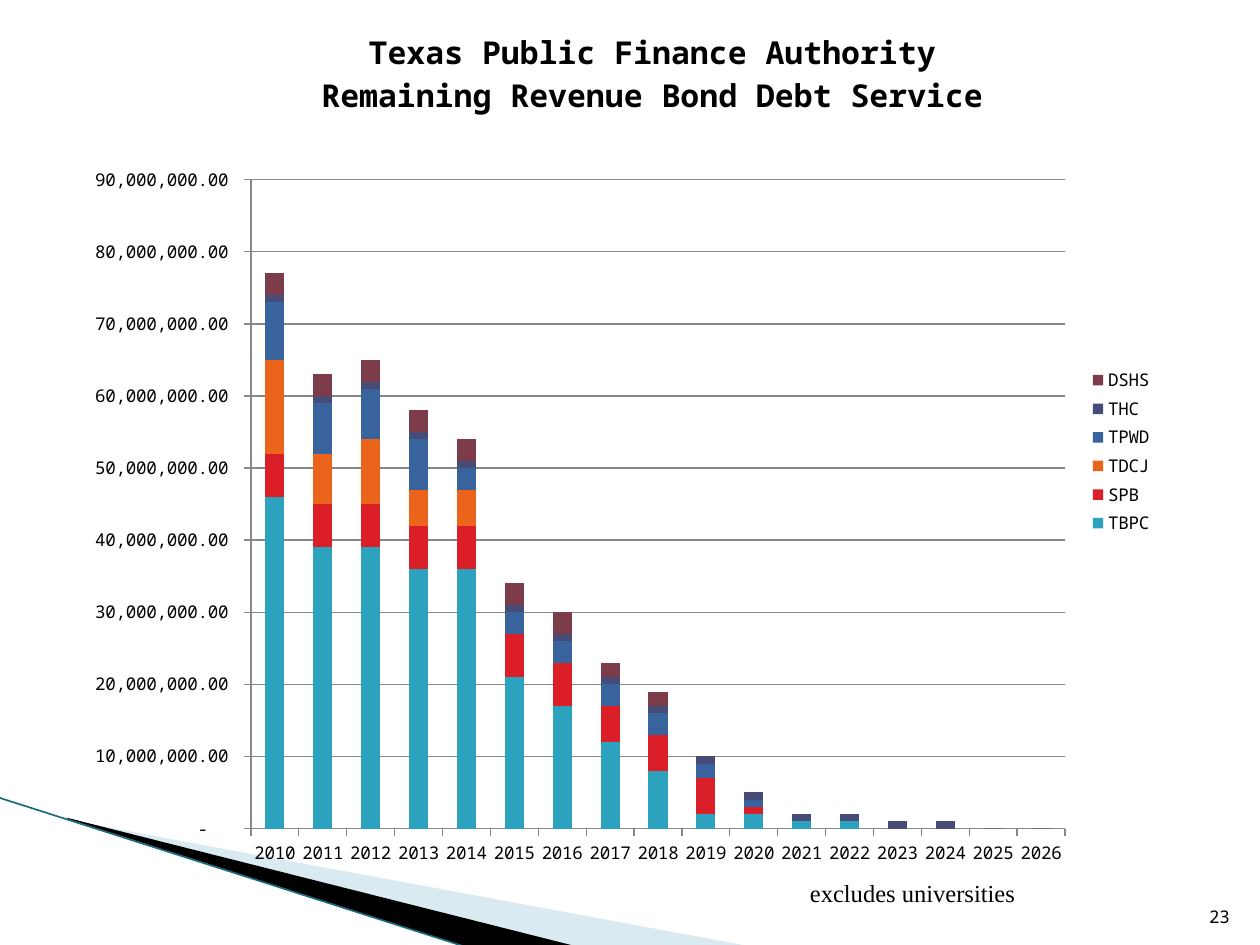
from lxml.etree import SubElement
from pptx import Presentation
from pptx.chart.data import CategoryChartData
from pptx.dml.color import RGBColor
from pptx.enum.chart import XL_CHART_TYPE, XL_LEGEND_POSITION, XL_TICK_MARK
from pptx.enum.shapes import MSO_CONNECTOR
from pptx.enum.text import MSO_ANCHOR, PP_ALIGN
from pptx.oxml import parse_xml
from pptx.oxml.ns import nsdecls, qn
from pptx.util import Inches, Pt

BLACK = RGBColor(0x00, 0x00, 0x00)
GRAY = RGBColor(0x88, 0x88, 0x88)
PALE = RGBColor(0xA0, 0xCB, 0xDC)
TEAL = RGBColor(0x1B, 0x6A, 0x7E)
AQUA = RGBColor(0x2D, 0xA2, 0xBF)
RED = RGBColor(0xDA, 0x1F, 0x28)
ORANGE = RGBColor(0xEB, 0x64, 0x1B)
BLUE = RGBColor(0x39, 0x63, 0x9D)
INDIGO = RGBColor(0x47, 0x4B, 0x78)
MAROON = RGBColor(0x7D, 0x3C, 0x4A)
MONO = "Noto Sans Mono"
SERIF = "Times New Roman"


def style(font, **values):
    font.color.rgb = BLACK
    for key, value in values.items():
        setattr(font, key, value)


def place(node, index, **percents):
    for old in node.findall(qn("c:layout")):
        node.remove(old)
    layout = parse_xml(f"<c:layout {nsdecls('c')}><c:manualLayout/></c:layout>")
    for tag, value in percents.items():
        text = value if isinstance(value, str) else str(value / 100)
        SubElement(layout[0], qn(f"c:{tag}")).set("val", text)
    node.insert(index, layout)


deck = Presentation()
deck.slide_width, deck.slide_height = Inches(10), Inches(7.5)
slide = deck.slides.add_slide(deck.slide_layouts[6])
shapes = slide.shapes

wedges = [
    (PALE, 40, [(0.55, 6.51), (5.95, 7.51), (4.56, 7.51), (0.55, 6.5)]),
    (BLACK, 100, [(0.53, 6.49), (4.57, 7.51), (3.72, 7.52), (0.54, 6.5)]),
]
for color, alpha, points in wedges:
    first, *rest = [(Inches(x), Inches(y)) for x, y in points]
    pen = shapes.build_freeform(*first)
    pen.add_line_segments(rest)
    wedge = pen.convert_to_shape()
    wedge.shadow.inherit = False
    wedge.line.fill.background()
    wedge.fill.solid()
    wedge.fill.fore_color.rgb = color
    if alpha < 100:
        tint = wedge.fill._xPr.find(qn("a:solidFill"))[0]
        SubElement(tint, qn("a:alpha")).set("val", str(alpha * 1000))

edge = shapes.add_connector(
    MSO_CONNECTOR.STRAIGHT, Inches(-0.01), Inches(6.33), Inches(3.71), Inches(7.52))
edge.line.color.rgb = TEAL
edge.line.width = Pt(0.95)
SubElement(edge._element.spPr, qn("a:effectLst"))

years = range(2010, 2027)
bonds = [
    ("TBPC", AQUA, [46, 39, 39, 36, 36, 21, 17, 12, 8, 2, 2, 1, 1]),
    ("SPB", RED, [6] * 7 + [5] * 3 + [1]),
    ("TDCJ", ORANGE, [13, 7, 9, 5, 5]),
    ("TPWD", BLUE, [8, 7, 7, 7, 3, 3, 3, 3, 3, 2, 1]),
    ("THC", INDIGO, [1] * 15),
    ("DSHS", MAROON, [3] * 7 + [2] * 2),
]
data = CategoryChartData()
data.categories = [str(year) for year in years]
for name, color, costs in bonds:
    costs = costs + [0] * (len(years) - len(costs))
    data.add_series(name, [cost * 1_000_000 for cost in costs])
chart = shapes.add_chart(
    XL_CHART_TYPE.COLUMN_STACKED,
    Inches(0.5), Inches(0.17), Inches(8.75), Inches(6.83), data).chart
style(chart.font, name=MONO, size=Pt(10))

plot = chart.plots[0]
plot.gap_width, plot.overlap = 150, 100
plot.vary_by_categories = False
for series, (name, color, costs) in zip(plot.series, bonds):
    series.format.fill.solid()
    series.format.fill.fore_color.rgb = color

chart.has_title = True
title = chart.chart_title
frame = title.text_frame
frame.text = "Texas Public Finance Authority\nRemaining Revenue Bond Debt Service"
for line in frame.paragraphs:
    style(line.runs[0].font, name=MONO, size=Pt(18), bold=True)
place(title._element, 1, xMode="edge", yMode="edge", x=23.1, y=0.3)
place(chart._chartSpace.chart.plotArea, 0, layoutTarget="inner",
      xMode="edge", yMode="edge", x=17.05, y=18.4, w=73.85, h=75.4)

chart.has_legend = True
chart.legend.position = XL_LEGEND_POSITION.RIGHT
chart.legend.include_in_layout = False

scale = chart.value_axis
scale.minimum_scale, scale.maximum_scale = 0, 90_000_000
scale.major_unit = 10_000_000
scale.tick_labels.number_format = r'_(* #,##0.00_);_(* \(#,##0.00\);_(* "-"??_);_(@_)'
scale.tick_labels.number_format_is_linked = False
for axis in (scale, chart.category_axis):
    axis.major_tick_mark = XL_TICK_MARK.OUTSIDE
    axis.format.line.color.rgb = GRAY
    axis.format.line.width = Pt(0.75)
scale.major_gridlines.format.line.color.rgb = GRAY
scale.major_gridlines.format.line.width = Pt(0.75)

notes = [
    ("23", (9.46, 7.01, 0.4, 0.4), MONO, 10, PP_ALIGN.RIGHT, MSO_ANCHOR.BOTTOM),
    ("excludes universities", (6.33, 6.92, 2, 0.34), SERIF, 14, PP_ALIGN.LEFT, MSO_ANCHOR.TOP),
]
for text, spot, face, size, align, anchor in notes:
    box = shapes.add_textbox(*[Inches(n) for n in spot])
    frame = box.text_frame
    frame.word_wrap = True
    frame.vertical_anchor = anchor
    line = frame.paragraphs[0]
    line.text = text
    line.alignment = align
    style(line.runs[0].font, name=face, size=Pt(size))

deck.save("out.pptx")
